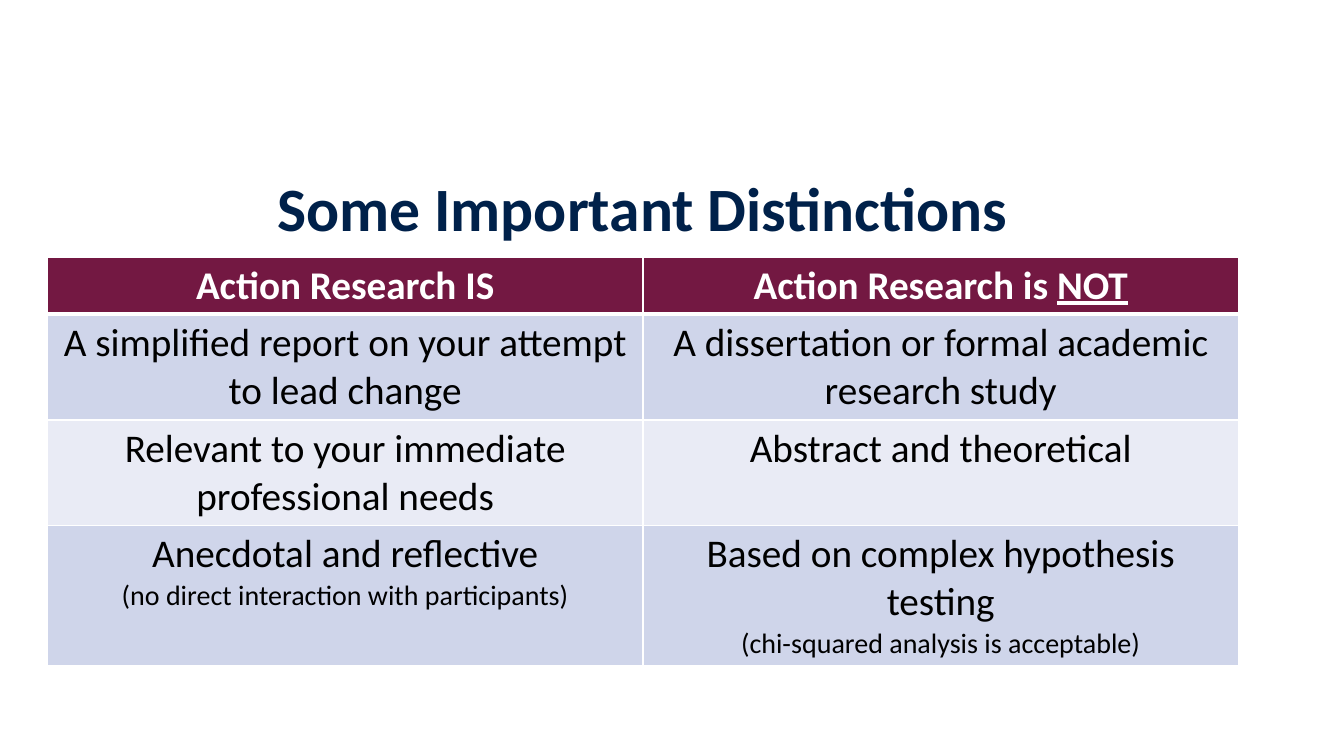
import pptx
import pptx.util
import pptx.dml.color
import pptx.enum.text
import pptx.oxml
import pptx.oxml.ns
from dataclasses import dataclass

Pt = pptx.util.Pt
RGB = pptx.dml.color.RGBColor.from_string
CENTER = pptx.enum.text.PP_ALIGN.CENTER

TITLE = "Some Important Distinctions"
HEADINGS = [
    [("Action Research IS", "heading")],
    [("Action Research is ", "heading"), ("NOT", "stressed")],
]
DISTINCTIONS = [
    [[("A simplified report on your attempt to lead change", "body")],
     [("A dissertation or formal academic research study", "body")]],
    [[("Relevant to your immediate professional needs", "body")],
     [("Abstract and theoretical", "body")]],
    [[("Anecdotal and reflective", "body"),
      ("(no direct interaction with participants)", "aside")],
     [("Based on complex hypothesis testing", "body"),
      ("(chi-squared analysis is acceptable)", "aside")]],
]


@dataclass(frozen=True)
class Theme:
    font: str = "Calibri"
    heading_fill: str = "731842"
    bands: tuple = ("CFD5EA", "E9EBF5")
    rule: str = "FFFFFF"
    styles: tuple = (
        ("title", (44, "00214A", True, False)),
        ("heading", (28, "FFFFFF", True, False)),
        ("stressed", (28, "FFFFFF", True, True)),
        ("body", (28, "000000", False, False)),
        ("aside", (20, "000000", False, False)),
    )


THEME = Theme()
STYLES = dict(THEME.styles)
LEFT, WIDTH = 33.84, 850.8
TITLE_TOP, TITLE_HEIGHT = 118, 65.6
TABLE_TOP = 183.6
ROW_HEIGHTS = [40.5, 75.5, 75.5, 100]


def write(paragraph, wording):
    paragraph.alignment = CENTER
    for text, style in wording:
        if style == "aside":
            paragraph.add_line_break()
        size, color, bold, underline = STYLES[style]
        run = paragraph.add_run()
        run.text = text
        run.font.name = THEME.font
        run.font.size = Pt(size)
        run.font.color.rgb = RGB(color)
        run.font.bold = bold
        run.font.underline = underline


def rule_cell(cell, widths):
    properties = cell._tc.get_or_add_tcPr()
    for position, (side, width) in enumerate(widths.items()):
        properties.insert(position, pptx.oxml.parse_xml(
            f'<a:ln{side} {pptx.oxml.ns.nsdecls("a")} w="{Pt(width)}">'
            f'<a:solidFill><a:srgbClr val="{THEME.rule}"/></a:solidFill>'
            f'</a:ln{side}>'))


def add_title(slide):
    frame = slide.shapes.add_textbox(
        Pt(LEFT), Pt(TITLE_TOP), Pt(WIDTH), Pt(TITLE_HEIGHT)).text_frame
    frame.word_wrap = True
    frame.vertical_anchor = pptx.enum.text.MSO_ANCHOR.MIDDLE
    frame.paragraphs[0].line_spacing = 0.9
    write(frame.paragraphs[0], [(TITLE, "title")])


def add_comparison(slide):
    rows = [HEADINGS] + DISTINCTIONS
    comparison = slide.shapes.add_table(
        len(rows), len(HEADINGS), Pt(LEFT), Pt(TABLE_TOP),
        Pt(WIDTH), Pt(sum(ROW_HEIGHTS))).table
    for r, (row, height) in enumerate(zip(rows, ROW_HEIGHTS)):
        comparison.rows[r].height = Pt(height)
        fill = THEME.bands[(r - 1) % 2] if r else THEME.heading_fill
        for c, wording in enumerate(row):
            cell = comparison.cell(r, c)
            cell.fill.solid()
            cell.fill.fore_color.rgb = RGB(fill)
            rule_cell(cell, {"L": 1, "R": 1, "T": 3 if r == 1 else 1,
                             "B": 1 if r else 3})
            write(cell.text_frame.paragraphs[0], wording)


def main():
    deck = pptx.Presentation()
    deck.slide_width, deck.slide_height = Pt(960), Pt(540)
    slide = deck.slides.add_slide(deck.slide_layouts[6])
    add_title(slide)
    add_comparison(slide)
    deck.save("out.pptx")


if __name__ == "__main__":
    main()
